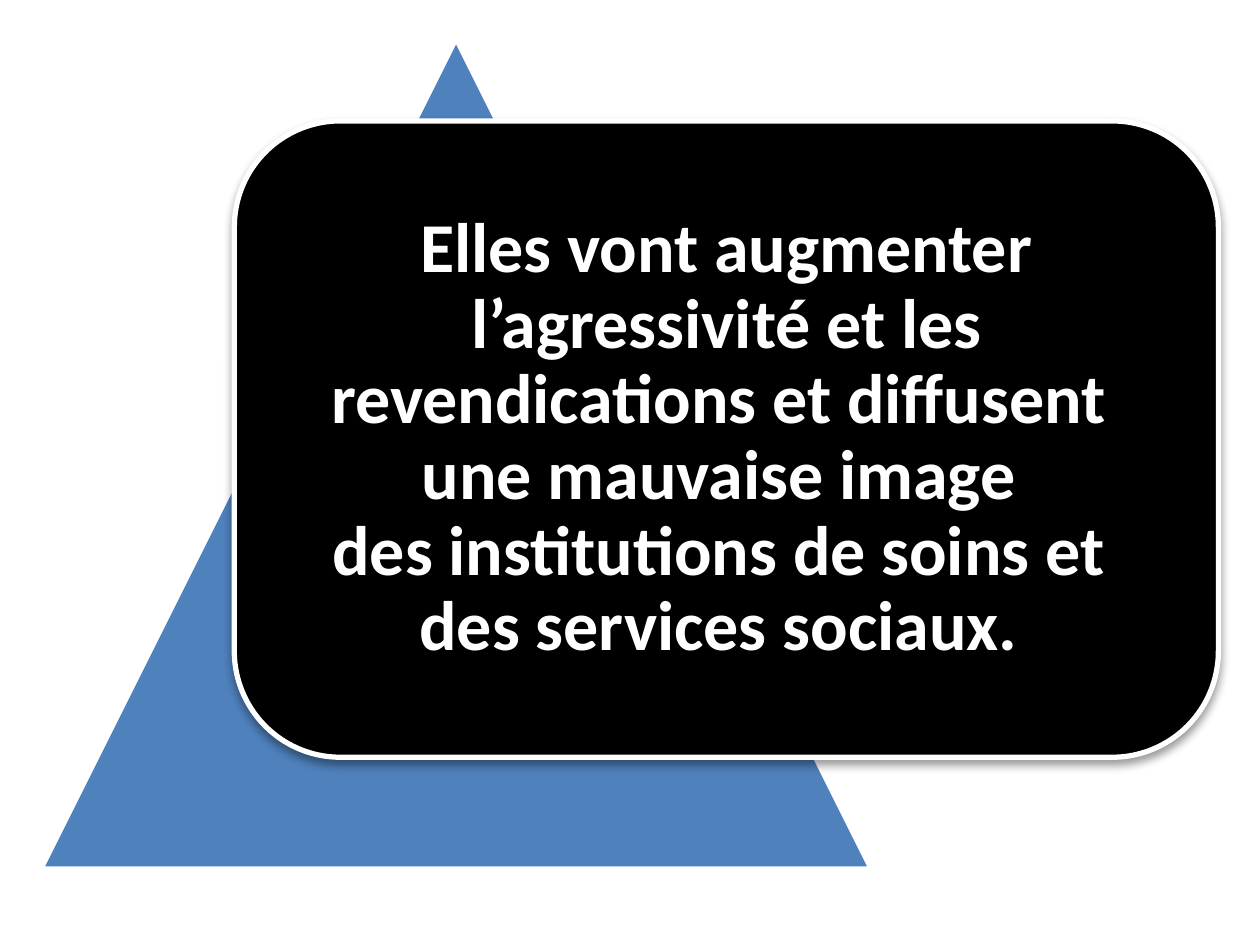
import pptx
import pptx.dml.color
import pptx.enum.shapes
import pptx.enum.text
import pptx.oxml
import pptx.oxml.ns
import pptx.util

Inches = pptx.util.Inches
Pt = pptx.util.Pt
RGBColor = pptx.dml.color.RGBColor
SHAPE = pptx.enum.shapes.MSO_SHAPE

BLUE = RGBColor(0x4F, 0x81, 0xBD)
BLACK = RGBColor(0, 0, 0)
WHITE = RGBColor(0xFF, 0xFF, 0xFF)
MESSAGE = (
    "Elles vont augmenter l’agressivité et les revendications et diffusent  "
    "une mauvaise image \vdes institutions de soins et \vdes services sociaux. "
)


def add_filled_shape(slide, kind, box, fill, line_width):
    """Add a preset shape with a solid fill and a white outline."""
    shape = slide.shapes.add_shape(kind, *map(Inches, box))
    shape.shadow.inherit = False
    shape.fill.solid()
    shape.fill.fore_color.rgb = fill
    shape.line.color.rgb = WHITE
    shape.line.width = Pt(line_width)
    return shape


def add_drop_shadow(shape, blur, distance, opacity):
    """Give the shape a black shadow that falls straight down."""
    effects = shape._element.spPr.find(pptx.oxml.ns.qn("a:effectLst"))
    effects.append(pptx.oxml.parse_xml(
        f'<a:outerShdw {pptx.oxml.ns.nsdecls("a")} blurRad="{Pt(blur)}" '
        f'dist="{Pt(distance)}" dir="5400000" rotWithShape="0">'
        f'<a:srgbClr val="{BLACK}"><a:alpha val="{opacity * 1000}"/></a:srgbClr>'
        '</a:outerShdw>'
    ))


def add_text(slide, box, text, *, size, color, font="Calibri", bold=False,
             margin=0.17, line_spacing=0.9, space_after=14):
    """Add a centred, wrapped text box."""
    frame = slide.shapes.add_textbox(*map(Inches, box)).text_frame
    frame.word_wrap = True
    frame.vertical_anchor = pptx.enum.text.MSO_ANCHOR.MIDDLE
    frame.margin_left = frame.margin_right = Inches(margin)
    frame.margin_top = frame.margin_bottom = Inches(margin)
    paragraph = frame.paragraphs[0]
    paragraph.text = text
    paragraph.alignment = pptx.enum.text.PP_ALIGN.CENTER
    paragraph.line_spacing = line_spacing
    paragraph.space_after = Pt(space_after)
    for run in paragraph.runs:
        run.font.name = font
        run.font.size = Pt(size)
        run.font.bold = bold
        run.font.color.rgb = color


def add_message_card(slide, box, inset=0.25):
    """Add the rounded black card with its message inside the inset."""
    left, top, width, height = box
    card = add_filled_shape(slide, SHAPE.ROUNDED_RECTANGLE, box, BLACK, 3)
    add_drop_shadow(card, blur=5.2, distance=3, opacity=40)
    inner = (left + inset, top + inset, width - 2 * inset, height - 2 * inset)
    add_text(slide, inner, MESSAGE, size=40, color=WHITE, bold=True)


def main():
    """Build and save the slide."""
    presentation = pptx.Presentation()
    presentation.slide_width = Inches(10)
    presentation.slide_height = Inches(7.5)
    slide = presentation.slides.add_slide(presentation.slide_layouts[6])
    add_filled_shape(slide, SHAPE.ISOSCELES_TRIANGLE, (0.32, 0.3, 6.6, 6.6), BLUE, 3.35)
    add_message_card(slide, (1.86, 0.96, 7.81, 5.05))
    presentation.save("out.pptx")


if __name__ == "__main__":
    main()
